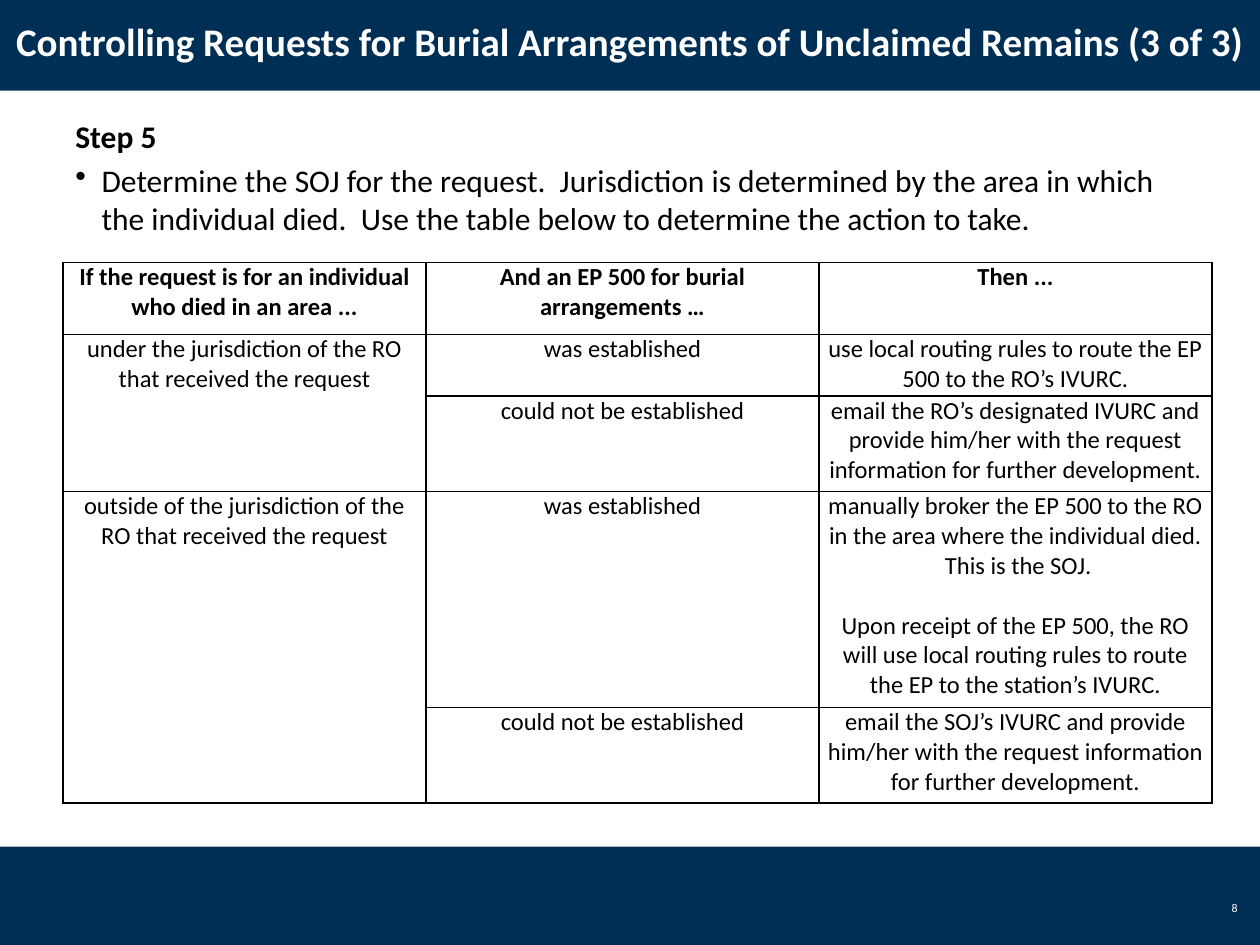
from dataclasses import dataclass

from lxml import etree
from pptx import Presentation
from pptx.dml.color import RGBColor
from pptx.enum.shapes import MSO_SHAPE
from pptx.enum.text import MSO_ANCHOR, MSO_AUTO_SIZE, PP_ALIGN
from pptx.oxml import parse_xml
from pptx.oxml.ns import nsdecls, qn
from pptx.util import Cm, Pt

RECT = MSO_SHAPE.RECTANGLE
MIDDLE = MSO_ANCHOR.MIDDLE
LEFT, CENTER, RIGHT = PP_ALIGN.LEFT, PP_ALIGN.CENTER, PP_ALIGN.RIGHT
NO_FIT = MSO_AUTO_SIZE.NONE


@dataclass(frozen=True)
class Theme:
    font: str = "Calibri"
    navy: RGBColor = RGBColor(0x00, 0x2F, 0x56)
    white: RGBColor = RGBColor(0xFF, 0xFF, 0xFF)
    black: RGBColor = RGBColor(0x00, 0x00, 0x00)
    title: float = 22.3
    body: float = 18
    cell: float = 14
    page: float = 6.8


theme = Theme()


def write(frame, text, size, color=theme.black, bold=False, align=LEFT, gap=0, bullet=False):
    """Fill the frame's first paragraph, or add one if that is taken."""
    para = frame.paragraphs[0]
    if para.runs:
        para = frame.add_paragraph()
    if bullet:
        props = para._p.get_or_add_pPr()
        props.set("marL", str(Cm(0.53)))
        props.set("indent", str(-Cm(0.53)))
        etree.SubElement(props, qn("a:buChar")).set("char", "•")
    para.alignment = align
    para.space_before = Pt(gap)
    run = para.add_run()
    run.text = text
    font = run.font
    font.name, font.size, font.bold = theme.font, Pt(size), bold
    font.color.rgb = color


def edge(cell):
    """Draw a thin black line on all four sides of a cell."""
    props = cell._tc.get_or_add_tcPr()
    for side in ("lnL", "lnR", "lnT", "lnB"):
        props.append(parse_xml(
            f'<a:{side} {nsdecls("a")} w="{Pt(1)}"><a:solidFill>'
            f'<a:srgbClr val="{theme.black}"/></a:solidFill></a:{side}>'))


deck = Presentation()
deck.slide_width, deck.slide_height = Cm(25.4), Cm(19.05)
slide = deck.slides.add_slide(deck.slide_layouts[5])
shapes = slide.shapes

# Navy bands at the foot and head
for top in (17.07, -0.2):
    band = shapes.add_shape(RECT, 0, Cm(top), deck.slide_width, Cm(2.03))
    band.shadow.inherit = False
    band.fill.solid()
    band.fill.fore_color.rgb = theme.navy
    band.line.fill.background()

# Title, brought in front of its band
title = shapes.title
title.left, title.top, title.width, title.height = 0, Cm(-0.2), deck.slide_width, Cm(2.03)
frame = title.text_frame
frame.auto_size, frame.vertical_anchor = NO_FIT, MIDDLE
write(frame, "Controlling Requests for Burial Arrangements of Unclaimed Remains (3 of 3)",
      theme.title, color=theme.white, bold=True, align=CENTER)
band.element.addnext(title.element)

# Step text
frame = shapes.add_textbox(Cm(1.27), Cm(2.24), Cm(22.86), Cm(2.9)).text_frame
frame.word_wrap = True
write(frame, "Step 5", theme.body, bold=True)
write(frame, "Determine the SOJ for the request.  Jurisdiction is determined by the area in "
      "which the individual died.  Use the table below to determine the action to take.",
      theme.body, gap=3.6, bullet=True)

# Action table: each cell is a list of paragraphs
rows = [
    (["If the request is for an individual who died in an area ..."],
     ["And an EP 500 for burial arrangements …"],
     ["Then ..."]),
    (["under the jurisdiction of the RO that received the request"],
     ["was established"],
     ["use local routing rules to route the EP 500 to the RO’s IVURC."]),
    ([],
     ["could not be established"],
     ["email the RO’s designated IVURC and provide him/her with the request information "
      "for further development."]),
    (["outside of the jurisdiction of the RO that received the request"],
     ["was established"],
     ["manually broker the EP 500 to the RO in the area where the individual died.  "
      "This is the SOJ.",
      "Upon receipt of the EP 500, the RO will use local routing rules to route the EP "
      "to the station’s IVURC."]),
    ([],
     ["could not be established"],
     ["email the SOJ’s IVURC and provide him/her with the request information for "
      "further development."]),
]
wides = (7.32, 7.92, 7.92)
highs = (1.45, 1.24, 1.93, 4.35, 1.93)
table = shapes.add_table(len(rows), len(wides), Cm(1.27), Cm(5.29),
                         Cm(sum(wides)), Cm(sum(highs))).table
for col, wide in zip(table.columns, wides):
    col.width = Cm(wide)
for row, high in zip(table.rows, highs):
    row.height = Cm(high)
for top in (1, 3):
    table.cell(top, 0).merge(table.cell(top + 1, 0))
for r, row in enumerate(rows):
    for c, paras in enumerate(row):
        cell = table.cell(r, c)
        edge(cell)
        cell.fill.solid()
        cell.fill.fore_color.rgb = theme.white
        cell.margin_left = cell.margin_right = Cm(0.15)
        cell.margin_top = cell.margin_bottom = 0
        for n, text in enumerate(paras):
            write(cell.text_frame, text, theme.cell, bold=r == 0, align=CENTER,
                  gap=17 if n else 0)

# Page number
frame = shapes.add_textbox(Cm(24.13), Cm(17.78), Cm(1.07), Cm(1.02)).text_frame
frame.word_wrap, frame.vertical_anchor = True, MIDDLE
write(frame, "8", theme.page, color=theme.white, align=RIGHT)

deck.save("out.pptx")
